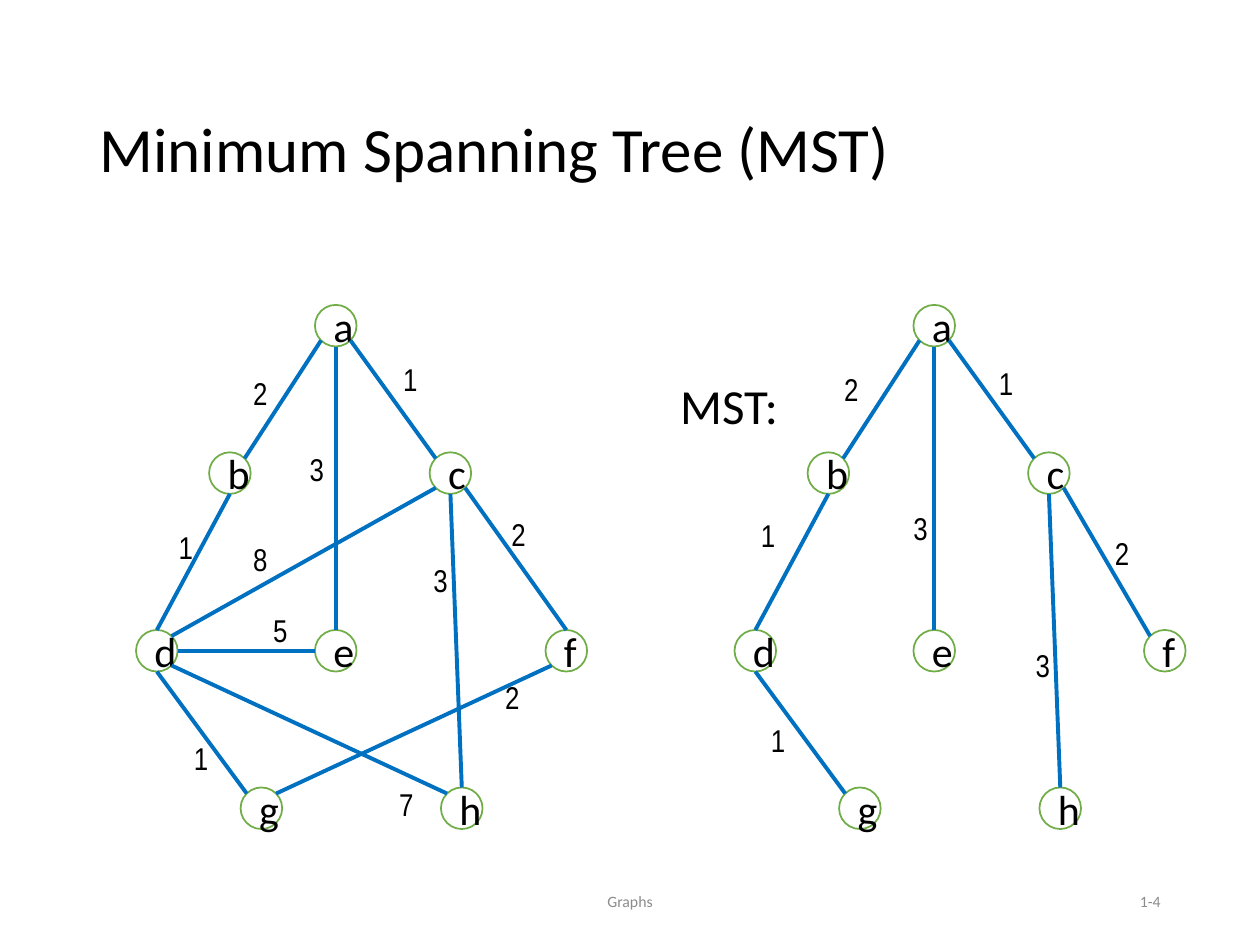
from math import cos, radians, sin

from lxml import etree
from pptx import Presentation
from pptx.dml.color import RGBColor
from pptx.enum.shapes import MSO_CONNECTOR as Connector, MSO_SHAPE as Shape
from pptx.enum.text import MSO_ANCHOR as Anchor, MSO_AUTO_SIZE as AutoSize, PP_ALIGN as Align
from pptx.oxml.ns import qn
from pptx.util import Inches, Pt

BLACK, GRAY, GREEN, BLUE, WHITE = "000000", "8C8C8C", "70AD47", "0070C0", "FFFFFF"
BODY_FONT, WEIGHT_FONT = "Calibri", "Arial Narrow"
NODE_SIZE = 0.33
GRAPH_TOP = 2.42

# Top left corner of each node, relative to its graph
NODES = {
    "a": (1.42, 0), "b": (0.58, 1.17), "c": (2.33, 1.17), "d": (0, 2.58),
    "e": (1.42, 2.58), "f": (3.25, 2.58), "g": (0.83, 3.83), "h": (2.42, 3.83),
}
# Angle of each point on a node's rim, clockwise from the right
RIM = {"right": 0, "lower right": 45, "bottom": 90, "lower left": 135,
       "left": 180, "upper left": 225, "top": 270, "upper right": 315}

# Edges: from node, rim point, to node, rim point, weight, place of the weight
FULL_GRAPH = [
    ("a", "lower left", "b", "upper right", "2", (0.83, 0.5)),
    ("a", "lower right", "c", "upper left", "1", (2.02, 0.39)),
    ("a", "bottom", "e", "top", "3", (1.28, 1.1)),
    ("b", "bottom", "d", "top", "1", (0.24, 1.72)),
    ("c", "lower left", "d", "upper right", "8", (0.83, 1.82)),
    ("c", "lower right", "f", "top", "2", (2.88, 1.62)),
    ("c", "bottom", "h", "top", "3", (2.26, 1.98)),
    ("e", "left", "d", "right", "5", (0.99, 2.38)),
    ("d", "bottom", "g", "upper left", "1", (0.36, 3.4)),
    ("d", "lower right", "h", "upper left", "7", (1.99, 3.76)),
    ("f", "lower left", "g", "upper right", "2", (2.83, 2.91)),
]
SPANNING_TREE = [
    ("a", "lower left", "b", "upper right", "2", (0.77, 0.47)),
    ("a", "lower right", "c", "upper left", "1", (2, 0.42)),
    ("a", "bottom", "e", "top", "3", (1.32, 1.57)),
    ("b", "bottom", "d", "top", "1", (0.11, 1.63)),
    ("c", "lower right", "f", "upper left", "2", (2.92, 1.77)),
    ("c", "bottom", "h", "top", "3", (2.29, 2.66)),
    ("d", "bottom", "g", "upper left", "1", (0.19, 3.25)),
]


def color(hex_string):
    return RGBColor.from_string(hex_string)


def add_run(paragraph, text, size, font=BODY_FONT, fill=BLACK):
    run = paragraph.add_run()
    run.text = text
    run.font.size = Pt(size)
    run.font.name = font
    run.font.color.rgb = color(fill)


def add_label(shapes, box, text, size, font=BODY_FONT, fill=BLACK,
              align=Align.LEFT, anchor=Anchor.TOP, wrap=False):
    frame = shapes.add_textbox(*map(Inches, box)).text_frame
    frame.word_wrap = wrap
    frame.auto_size = AutoSize.NONE if wrap else AutoSize.SHAPE_TO_FIT_TEXT
    frame.vertical_anchor = anchor
    paragraph = frame.paragraphs[0]
    paragraph.alignment = align
    add_run(paragraph, text, size, font, fill)


def set_title(slide, box, text):
    title = slide.shapes.title
    title.left, title.top, title.width, title.height = map(Inches, box)
    frame = title.text_frame
    frame.auto_size = AutoSize.NONE
    frame.vertical_anchor = Anchor.MIDDLE
    paragraph = frame.paragraphs[0]
    paragraph.alignment = Align.LEFT
    paragraph.line_spacing = 1.15
    paragraph.space_before = Pt(6)
    add_run(paragraph, text, 36)


def add_node(shapes, left, top, name):
    node = shapes.add_shape(Shape.OVAL, Inches(left), Inches(top),
                            Inches(NODE_SIZE), Inches(NODE_SIZE))
    node.shadow.inherit = False
    node.fill.solid()
    node.fill.fore_color.rgb = color(WHITE)
    node.line.color.rgb = color(GREEN)
    node.line.width = Pt(1)
    frame = node.text_frame
    frame.word_wrap = True
    frame.vertical_anchor = Anchor.MIDDLE
    paragraph = frame.paragraphs[0]
    paragraph.alignment = Align.CENTER
    add_run(paragraph, name, 24)


def rim_point(left, top, name, side):
    radius, angle = NODE_SIZE / 2, radians(RIM[side])
    x, y = NODES[name]
    return (Inches(left + x + radius * (1 + cos(angle))),
            Inches(top + y + radius * (1 + sin(angle))))


def add_edge(shapes, start, end):
    edge = shapes.add_connector(Connector.STRAIGHT, *start, *end)
    edge.line.color.rgb = color(BLUE)
    edge.line.width = Pt(2.25)
    etree.SubElement(edge._element.spPr, qn("a:effectLst"))


def add_graph(slide, left, top, edges):
    shapes = slide.shapes.add_group_shape().shapes
    for name, (x, y) in NODES.items():
        add_node(shapes, left + x, top + y, name)
    for start, start_side, end, end_side, _, _ in edges:
        add_edge(shapes, rim_point(left, top, start, start_side),
                 rim_point(left, top, end, end_side))
    # Weights stand in front of the edges
    for *_, weight, (x, y) in edges:
        add_label(shapes, (left + x, top + y, 0.32, 0.4), weight, 18, WEIGHT_FONT)


def add_footer(slide, top, height):
    for left, width, text, align in ((3.31, 3.38, "Graphs", Align.CENTER),
                                     (7.06, 2.25, "1-4", Align.RIGHT)):
        add_label(slide.shapes, (left, top, width, height), text, 9, fill=GRAY,
                  align=align, anchor=Anchor.MIDDLE, wrap=True)


def main():
    presentation = Presentation()
    presentation.slide_width, presentation.slide_height = Inches(10), Inches(7.5)
    slide = presentation.slides.add_slide(presentation.slide_layouts.get_by_name("Title Only"))
    set_title(slide, (0.69, 0.4, 8.62, 1.45), "Minimum Spanning Tree (MST)")
    add_footer(slide, 6.95, 0.4)
    add_label(slide.shapes, (5.3, 2.93, 0.99, 0.57), "MST:", 28)
    add_graph(slide, 1.08, GRAPH_TOP, FULL_GRAPH)
    add_graph(slide, 5.83, GRAPH_TOP, SPANNING_TREE)
    presentation.save("out.pptx")


if __name__ == "__main__":
    main()
